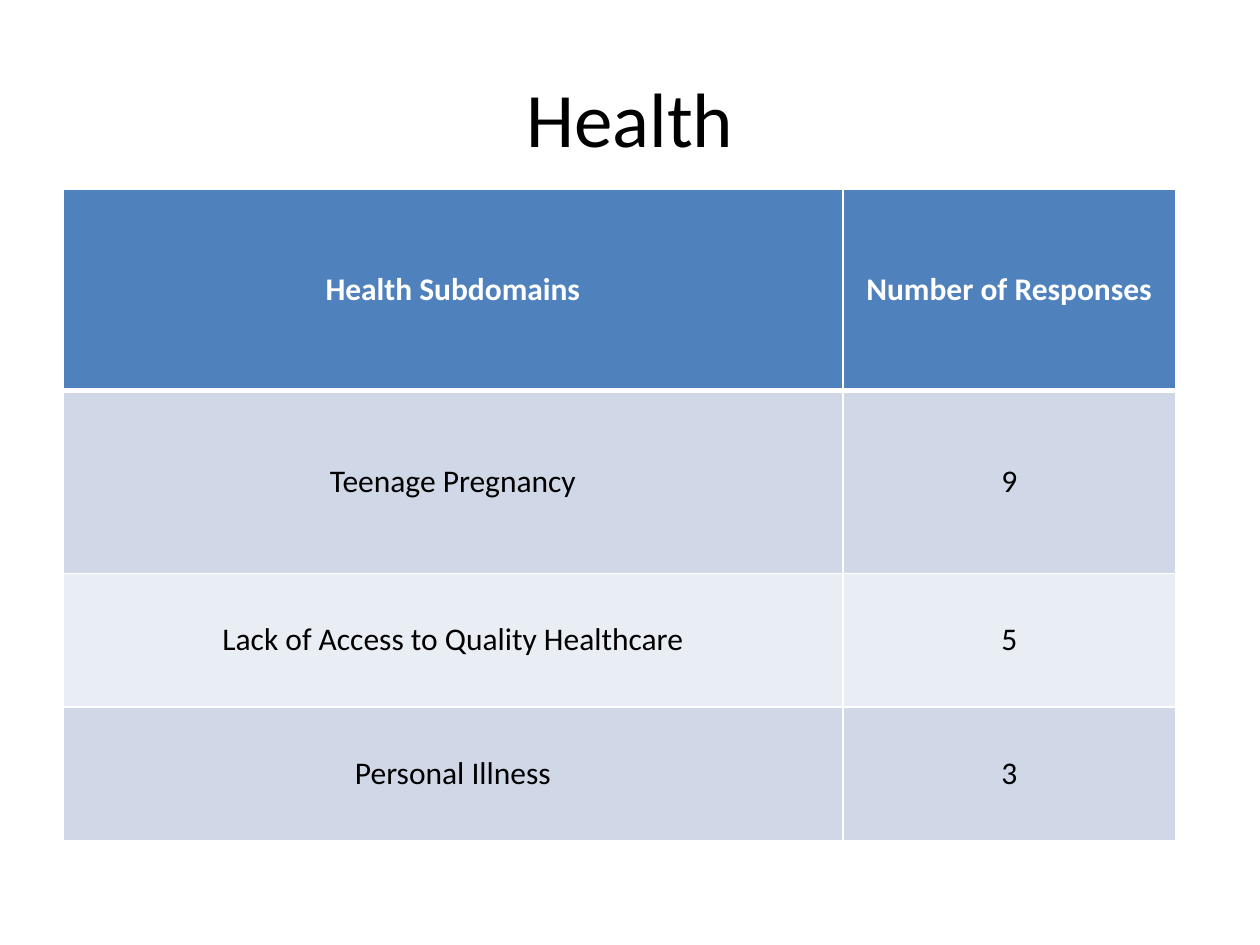
import pptx
import pptx.util
import pptx.dml.color
import pptx.enum.text
import pptx.oxml.ns
import lxml.etree

TITLE = "Health"
ROWS = [
    ("Health Subdomains", "Number of Responses"),
    ("Teenage Pregnancy", "9"),
    ("Lack of Access to Quality Healthcare", "5"),
    ("Personal Illness", "3"),
]
COLUMN_WIDTHS = [6.19, 2.64]
ROW_HEIGHTS = [1.6, 1.45, 1.06, 1.06]
TITLE_AREA = (0.5, 0.3, 9, 1.25)
TABLE_AREA = (0.5, 1.5, sum(COLUMN_WIDTHS), sum(ROW_HEIGHTS))

THEME = {
    "font": "Calibri",
    "title_size": 44,
    "table_size": 18,
    "text": "000000",
    "header_text": "FFFFFF",
    "header_fill": "4F81BD",
    "bands": ["D0D8E8", "E9EDF4"],
    "border": "FFFFFF",
    "thin": 1,
    "thick": 3,
}


def inches(values):
    return [pptx.util.Inches(value) for value in values]


def color(name):
    return pptx.dml.color.RGBColor.from_string(name)


def write(frame, text, size, text_color, bold=False):
    frame.vertical_anchor = pptx.enum.text.MSO_ANCHOR.MIDDLE
    para = frame.paragraphs[0]
    para.alignment = pptx.enum.text.PP_ALIGN.CENTER
    span = para.add_run()
    span.text = text
    span.font.name = THEME["font"]
    span.font.size = pptx.util.Pt(size)
    span.font.bold = bold
    span.font.color.rgb = color(text_color)


def add_borders(cell, widths):
    qn = pptx.oxml.ns.qn
    properties = cell._tc.get_or_add_tcPr()
    for side, width in zip("LRTB", widths):
        line = lxml.etree.SubElement(
            properties, qn(f"a:ln{side}"), w=str(pptx.util.Pt(width)))
        fill = lxml.etree.SubElement(line, qn("a:solidFill"))
        lxml.etree.SubElement(fill, qn("a:srgbClr"), val=THEME["border"])


def add_title(page):
    box = page.shapes.title
    box.left, box.top, box.width, box.height = inches(TITLE_AREA)
    write(box.text_frame, TITLE, THEME["title_size"], THEME["text"])


def add_responses(page):
    table = page.shapes.add_table(
        len(ROWS), len(COLUMN_WIDTHS), *inches(TABLE_AREA)).table
    for column, width in zip(table.columns, inches(COLUMN_WIDTHS)):
        column.width = width
    for row, height in zip(table.rows, inches(ROW_HEIGHTS)):
        row.height = height
    thin, thick = THEME["thin"], THEME["thick"]
    for row_index, texts in enumerate(ROWS):
        header = row_index == 0
        fill = THEME["header_fill"] if header else THEME["bands"][(row_index - 1) % 2]
        text_color = THEME["header_text" if header else "text"]
        top = thick if row_index == 1 else thin
        bottom = thick if header else thin
        for column_index, text in enumerate(texts):
            cell = table.cell(row_index, column_index)
            add_borders(cell, (thin, thin, top, bottom))
            cell.fill.solid()
            cell.fill.fore_color.rgb = color(fill)
            cell.vertical_anchor = pptx.enum.text.MSO_ANCHOR.MIDDLE
            write(cell.text_frame, text, THEME["table_size"], text_color, header)


def main():
    deck = pptx.Presentation()
    deck.slide_width, deck.slide_height = inches((10, 7.5))
    page = deck.slides.add_slide(deck.slide_layouts[5])
    add_title(page)
    add_responses(page)
    deck.save("out.pptx")


if __name__ == "__main__":
    main()
